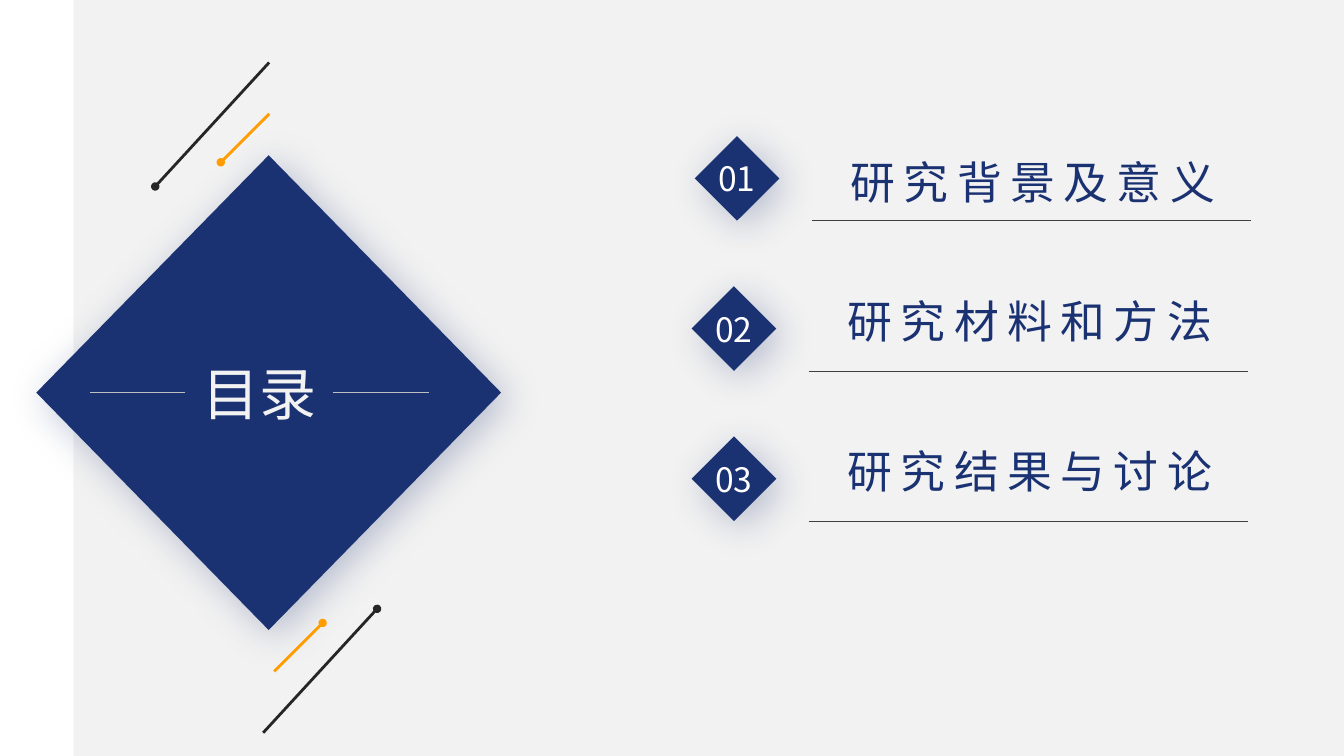
from dataclasses import dataclass

from lxml import etree
from pptx import Presentation
from pptx.dml.color import RGBColor
from pptx.enum.shapes import MSO_CONNECTOR, MSO_SHAPE
from pptx.enum.text import MSO_ANCHOR, PP_ALIGN
from pptx.oxml.ns import qn
from pptx.util import Inches, Pt

STRAIGHT = MSO_CONNECTOR.STRAIGHT
RECTANGLE = MSO_SHAPE.RECTANGLE
DIAMOND = MSO_SHAPE.DIAMOND
MIDDLE = MSO_ANCHOR.MIDDLE
TOP = MSO_ANCHOR.TOP
CENTER = PP_ALIGN.CENTER
LEFT_SIDE, RIGHT_SIDE = 1, 3


@dataclass(frozen=True)
class Theme:
    """Colours, fonts and sizes of the slide."""
    navy: str = "1A3172"
    paper: str = "F2F2F2"
    white: str = "FFFFFF"
    amber: str = "FF9C00"
    ink: str = "262626"
    rule: str = "404040"
    pale_rule: str = "BFBFBF"
    body_font: str = "Noto Sans CJK JP"
    title_font: str = "Arial"
    title_size: float = 40.7
    topic_size: float = 32
    number_size: float = 24
    topic_tracking: int = 600
    thin: float = 0.5
    thick: float = 2


THEME = Theme()


def add_block(page, kind, left, top, width, height, color):
    """Add a flat filled shape without outline."""
    block = page.shapes.add_shape(kind, Inches(left), Inches(top), Inches(width), Inches(height))
    block.shadow.inherit = False
    block.fill.solid()
    block.fill.fore_color.rgb = RGBColor.from_string(color)
    block.line.fill.background()
    return block


def add_diamond(page, left, top, width, height):
    """Add a navy diamond with a soft shadow down to the right."""
    diamond = add_block(page, DIAMOND, left, top, width, height, THEME.navy)
    effects = diamond.element.spPr.find(qn("a:effectLst"))
    shadow = etree.SubElement(effects, qn("a:outerShdw"), blurRad=str(Pt(28)), dist=str(Pt(7)),
                              dir="2700000", algn="tl", rotWithShape="0")
    color = etree.SubElement(shadow, qn("a:srgbClr"), val=THEME.navy)
    etree.SubElement(color, qn("a:alpha"), val="27000")
    return diamond


def set_text(box, text, size, font, color, anchor=MIDDLE, tracking=0, spacing=None):
    """Write one centred, unwrapped line into a shape."""
    frame = box.text_frame
    frame.text = text
    frame.word_wrap = False
    frame.vertical_anchor = anchor
    para = frame.paragraphs[0]
    para.alignment = CENTER
    if spacing:
        para.line_spacing = spacing
    span = para.runs[0]
    span.font.size = Pt(size)
    span.font.name = font
    span.font.color.rgb = RGBColor.from_string(color)
    properties = span.font._element
    etree.SubElement(properties, qn("a:ea"), typeface=font)
    if tracking:
        properties.set("spc", str(tracking))


def add_label(page, left, top, width, height):
    """Add an empty text box."""
    return page.shapes.add_textbox(Inches(left), Inches(top), Inches(width), Inches(height))


def add_line(page, start, end, color, weight, dotted_end=False):
    """Add a straight line, optionally ending in a round dot."""
    line = page.shapes.add_connector(STRAIGHT, *(Inches(value) for value in (*start, *end)))
    line.line.color.rgb = RGBColor.from_string(color)
    line.line.width = Pt(weight)
    properties = line.element.spPr
    if dotted_end:
        etree.SubElement(properties.find(qn("a:ln")), qn("a:tailEnd"), type="oval")
    etree.SubElement(properties, qn("a:effectLst"))
    return line


def add_backdrop(page, margin, width, height):
    """Fill the page with a white margin and a pale panel."""
    add_block(page, RECTANGLE, 0, 0, margin, height, THEME.white)
    add_block(page, RECTANGLE, margin, 0, width - margin, height, THEME.paper)


def add_title(page, left, top, width, height):
    """Place the large diamond with its heading between two rules."""
    add_diamond(page, left, top, width, height)
    label_left, label_width, label_height, reach = left + 1.48, 1.46, 0.7, 0.95
    middle = top + height / 2
    label = add_label(page, label_left, middle - label_height / 2, label_width, label_height)
    set_text(label, "目录", THEME.title_size, THEME.title_font, THEME.paper)
    for side, edge, step in ((LEFT_SIDE, label_left, -reach),
                             (RIGHT_SIDE, label_left + label_width, reach)):
        rule = add_line(page, (edge, middle), (edge + step, middle), THEME.pale_rule, THEME.thin)
        rule.begin_connect(label, side)


def add_topic(page, left, top, number, topic, drop, spacing):
    """Place one numbered topic with a rule level with the diamond's foot."""
    side = 0.84
    badge = add_diamond(page, left, top, side, side)
    set_text(badge, number, THEME.number_size, THEME.body_font, THEME.white)
    label = add_label(page, left + 1.1, top + drop, 4.51, 0.82)
    set_text(label, topic, THEME.topic_size, THEME.body_font, THEME.navy, TOP,
             THEME.topic_tracking, spacing)
    foot = top + side
    add_line(page, (left + 1.16, foot), (left + 5.52, foot), THEME.rule, THEME.thin)


def add_accents(page, dark_start, amber_start, direction):
    """Place a long dark and a short amber slanted stroke, each ending in a dot."""
    for (x, y), run, rise, color in ((dark_start, 1.13, 1.23, THEME.ink),
                                     (amber_start, 0.48, 0.48, THEME.amber)):
        end = (x - direction * run, y + direction * rise)
        add_line(page, (x, y), end, color, THEME.thick, dotted_end=True)


def build_contents(page, width, height):
    """Compose the contents page."""
    page.background.fill.solid()
    page.background.fill.fore_color.rgb = RGBColor.from_string(THEME.paper)
    add_backdrop(page, 0.73, width, height)
    topics = (("研究背景及意义", 6.89, -0.13, 1.5),
              ("研究材料和方法", 6.86, 0.02, None),
              ("研究结果与讨论", 6.86, 0.02, None))
    for index, (topic, left, drop, spacing) in enumerate(topics):
        add_topic(page, left, 1.35 + 1.49 * index, f"{index + 1:02}", topic, drop, spacing)
    add_title(page, 0.36, 1.54, 4.61, 4.71)
    add_accents(page, (2.67, 0.62), (2.67, 1.13), 1)
    add_accents(page, (2.61, 7.27), (2.72, 6.66), -1)


def main():
    """Build and save the deck."""
    width, height = 13.33, 7.5
    deck = Presentation()
    deck.slide_width, deck.slide_height = Inches(width), Inches(height)
    page = deck.slides.add_slide(deck.slide_layouts[6])
    build_contents(page, width, height)
    deck.save("out.pptx")


if __name__ == "__main__":
    main()
